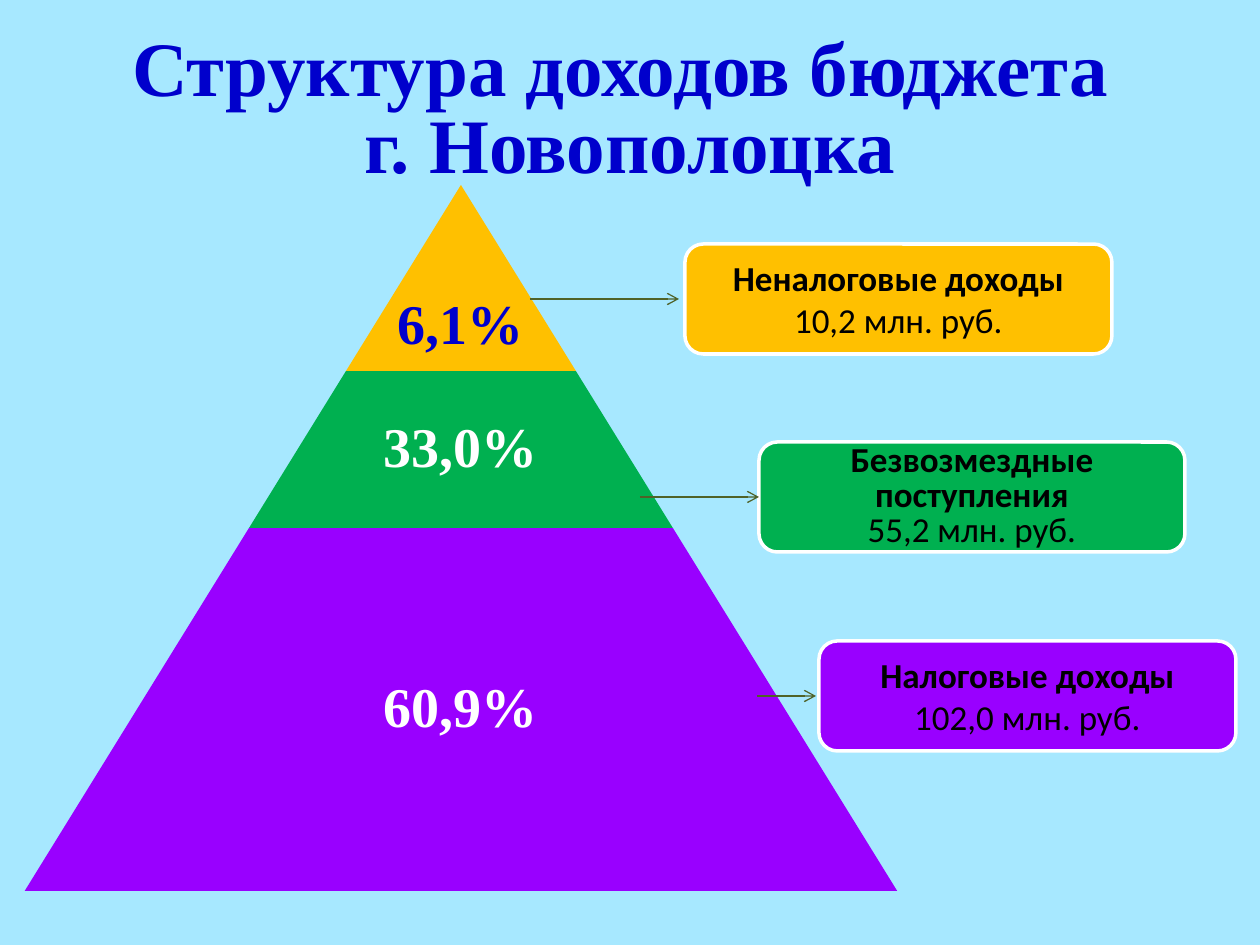
import pptx
import pptx.util
import pptx.dml.color
import pptx.enum.shapes
import pptx.enum.text
import pptx.oxml

PX = 914400 // 126
SHAPE = pptx.enum.shapes.MSO_SHAPE
SERIF, SANS = "Times New Roman", "Calibri"
BLUE, WHITE, BLACK, OLIVE = "0000CC", "FFFFFF", "000000", "4F6228"

TITLE = "Структура доходов бюджета \vг. Новополоцка"

# Pyramid levels: share, fill, text colour, top, bottom, top of the text
LEVELS = [
    ("6,1%", "FFC000", BLUE, 185, 371, 281),
    ("33,0%", "00B050", WHITE, 371, 528, 371),
    ("60,9%", "9900FF", WHITE, 528, 891, 528),
]
APEX, SLOPE = 461, 0.618

# Cards: name, sum, left, top, width, line spacing, arrow start, gap after arrow
CARDS = [
    ("Неналоговые доходы", "10,2 млн. руб.", 685, 244, 427, None, 530, 6),
    ("Безвозмездные поступления", "55,2 млн. руб.", 759, 442, 426, 20, 640, 0),
    ("Налоговые доходы", "102,0 млн. руб.", 819, 641, 417, None, 757, 3),
]
HIGH = 110


def px(*nums):
    return [round(n * PX) for n in nums]


def tint(code):
    return pptx.dml.color.RGBColor.from_string(code)


def write(frame, lines, size, face, color, space, inset=None):
    """Fill a frame with centred lines, each given as (text, bold)."""
    frame.word_wrap = True
    frame.vertical_anchor = pptx.enum.text.MSO_ANCHOR.MIDDLE
    if inset is not None:
        frame.margin_left = frame.margin_right = px(inset)[0]
        frame.margin_top = frame.margin_bottom = px(inset)[0]
    for i, (text, bold) in enumerate(lines):
        para = frame.add_paragraph() if i else frame.paragraphs[0]
        para.text = text
        para.alignment = pptx.enum.text.PP_ALIGN.CENTER
        para.line_spacing = space
        font = para.font
        font.size, font.name, font.bold = pptx.util.Pt(size), face, bold
        font.color.rgb = tint(color)


def block(slide, kind, box, fill, adj=None):
    shape = slide.shapes.add_shape(kind, *px(*box))
    shape.shadow.inherit = False
    shape.fill.solid()
    shape.fill.fore_color.rgb = tint(fill)
    shape.line.fill.background()
    if adj is not None:
        shape.adjustments[0] = adj
    return shape


def arrow(slide, start, end, y):
    link = slide.shapes.add_connector(
        pptx.enum.shapes.MSO_CONNECTOR.STRAIGHT, *px(start, y, end, y))
    link.line.color.rgb = tint(OLIVE)
    link.line.width = pptx.util.Pt(0.75)
    line = link.line._get_or_add_ln()
    pptx.oxml.ns.qn("a:tailEnd")
    tail = line.makeelement(pptx.oxml.ns.qn("a:tailEnd"), {"type": "arrow"})
    line.append(tail)
    props = link._element.spPr
    props.append(props.makeelement(pptx.oxml.ns.qn("a:effectLst"), {}))
    return link


def main():
    deck = pptx.Presentation()
    deck.slide_width, deck.slide_height = px(1260, 945)
    slide = deck.slides.add_slide(deck.slide_layouts[6])
    slide.background.fill.solid()
    slide.background.fill.fore_color.rgb = tint("A7E8FF")

    # Title
    title = slide.shapes.add_textbox(*px(63, 38, 1134, 147))
    write(title.text_frame, [(TITLE, True)], 44, SERIF, BLUE, pptx.util.Pt(44))

    # Pyramid: each level widens with its depth below the apex
    peak = LEVELS[0][3]
    for share, fill, color, top, base, head in LEVELS:
        half = (base - peak) * SLOPE
        block(slide, SHAPE.TRAPEZOID,
              (APEX - half, top, 2 * half, base - top), fill, SLOPE)
        label = slide.shapes.add_textbox(
            *px(APEX - 138, head, 276, base - head))
        write(label.text_frame, [(share, True)], 32, SERIF, color, 0.9, 5)

    # Cards with their arrows
    for level, card in zip(LEVELS, CARDS):
        name, total, left, top, width, space, start, gap = card
        shape = block(slide, SHAPE.ROUNDED_RECTANGLE,
                      (left, top, width, HIGH), level[1])
        shape.line.color.rgb = tint(WHITE)
        shape.line.width = pptx.util.Pt(2)
        write(shape.text_frame, [(name, True), (total, False)], 20, SANS,
              BLACK, pptx.util.Pt(space) if space else None)
        link = arrow(slide, start, left - gap, top + HIGH / 2)
        if not gap:
            link.end_connect(shape, 1)

    deck.save("out.pptx")


if __name__ == "__main__":
    main()
